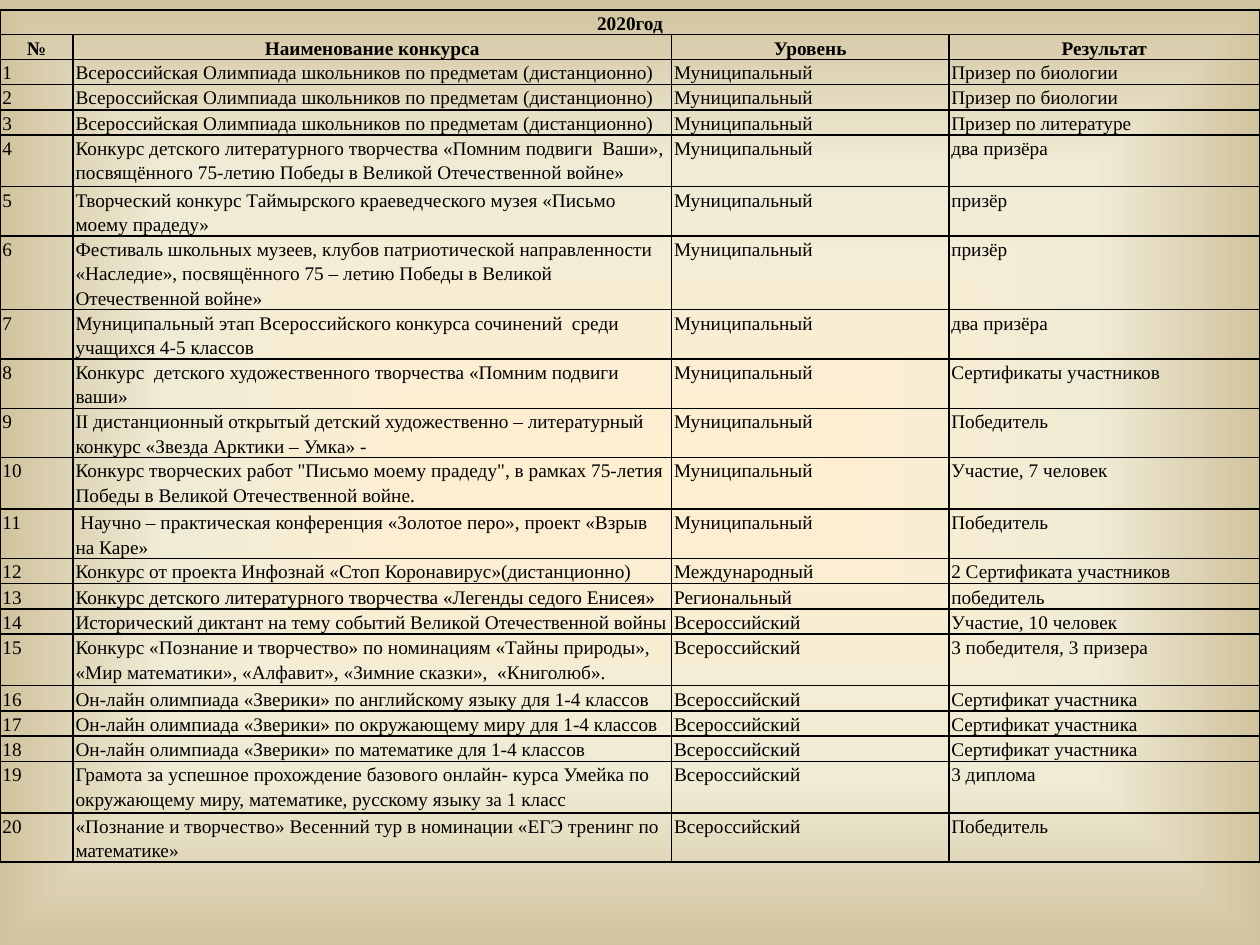
from lxml import etree
from pptx import Presentation
from pptx.dml.color import RGBColor
from pptx.enum.text import PP_ALIGN as Align
from pptx.oxml import parse_xml
from pptx.oxml.ns import qn
from pptx.util import Inches, Pt

BLACK = RGBColor(0x00, 0x00, 0x00)
CREAM = RGBColor(0xFF, 0xEF, 0xD1)
IVORY = RGBColor(0xF0, 0xEB, 0xD5)
SAND = RGBColor(0xD1, 0xC3, 0x9F)
DRAWING = "http://schemas.openxmlformats.org/drawingml/2006/main"

MUNICIPAL = "Муниципальный"
NATIONAL = "Всероссийский"
OLYMPIAD = "Всероссийская Олимпиада школьников по предметам (дистанционно)"
CERTIFICATE = "Сертификат участника"

# Contest, level, result, row height
contests = [
    (OLYMPIAD, MUNICIPAL, "Призер по биологии", 0.2),
    (OLYMPIAD, MUNICIPAL, "Призер по биологии", 0.2),
    (OLYMPIAD, MUNICIPAL, "Призер по литературе", 0.2),
    ("Конкурс детского литературного творчества «Помним подвиги  Ваши», "
     "посвящённого 75-летию Победы в Великой Отечественной войне»",
     MUNICIPAL, "два призёра", 0.41),
    ("Творческий конкурс Таймырского краеведческого музея «Письмо моему прадеду»",
     MUNICIPAL, "призёр", 0.3),
    ("Фестиваль школьных музеев, клубов патриотической направленности "
     "«Наследие», посвящённого 75 – летию Победы в Великой Отечественной войне»",
     MUNICIPAL, "призёр", 0.51),
    ("Муниципальный этап Всероссийского конкурса сочинений  среди "
     "учащихся 4-5 классов", MUNICIPAL, "два призёра", 0.3),
    ("Конкурс  детского художественного творчества «Помним подвиги ваши»",
     MUNICIPAL, "Сертификаты участников", 0.2),
    ("II дистанционный открытый детский художественно – литературный "
     "конкурс «Звезда Арктики – Умка» -", MUNICIPAL, "Победитель", 0.3),
    ("Конкурс творческих работ \"Письмо моему прадеду\", в рамках 75-летия "
     "Победы в Великой Отечественной войне.", MUNICIPAL, "Участие, 7 человек", 0.41),
    (" Научно – практическая конференция «Золотое перо», проект «Взрыв на Каре»",
     MUNICIPAL, "Победитель", 0.3),
    ("Конкурс от проекта Инфознай «Стоп Коронавирус»(дистанционно)",
     "Международный", "2 Сертификата участников", 0.2),
    ("Конкурс детского литературного творчества «Легенды седого Енисея»",
     "Региональный", "победитель", 0.2),
    ("Исторический диктант на тему событий Великой Отечественной войны",
     NATIONAL, "Участие, 10 человек", 0.2),
    ("Конкурс «Познание и творчество» по номинациям «Тайны природы», "
     "«Мир математики», «Алфавит», «Зимние сказки»,  «Книголюб».",
     NATIONAL, "3 победителя, 3 призера", 0.41),
    ("Он-лайн олимпиада «Зверики» по английскому языку для 1-4 классов",
     NATIONAL, CERTIFICATE, 0.2),
    ("Он-лайн олимпиада «Зверики» по окружающему миру для 1-4 классов",
     NATIONAL, CERTIFICATE, 0.2),
    ("Он-лайн олимпиада «Зверики» по математике для 1-4 классов",
     NATIONAL, CERTIFICATE, 0.2),
    ("Грамота за успешное прохождение базового онлайн- курса Умейка по "
     "окружающему миру, математике, русскому языку за 1 класс",
     NATIONAL, "3 диплома", 0.41),
    ("«Познание и творчество» Весенний тур в номинации «ЕГЭ тренинг по математике»",
     NATIONAL, "Победитель", 0.3),
]


def add_borders(cell):
    """Draw a thin black line on each side of a cell."""
    properties = cell._tc.get_or_add_tcPr()
    for position, side in enumerate(("lnL", "lnR", "lnT", "lnB")):
        line = etree.Element(qn(f"a:{side}"), w=str(Pt(1)))
        fill = etree.SubElement(line, qn("a:solidFill"))
        etree.SubElement(fill, qn("a:srgbClr"), val=str(BLACK))
        properties.insert(position, line)


deck = Presentation()
deck.slide_width, deck.slide_height = Inches(10), Inches(7.5)
page = deck.slides.add_slide(deck.slide_layouts[6])

# Background gradient spreading from the centre
page.background.fill.gradient()
gradient = page.background._cSld.find(".//" + qn("a:gradFill"))
gradient.getparent().replace(gradient, parse_xml(
    f'<a:gradFill xmlns:a="{DRAWING}" rotWithShape="1"><a:gsLst>'
    f'<a:gs pos="0"><a:srgbClr val="{CREAM}"><a:alpha val="62000"/></a:srgbClr></a:gs>'
    f'<a:gs pos="65000"><a:srgbClr val="{IVORY}"/></a:gs>'
    f'<a:gs pos="100000"><a:srgbClr val="{SAND}"/></a:gs></a:gsLst>'
    '<a:path path="shape"><a:fillToRect l="50000" t="50000" r="50000" b="50000"/>'
    '</a:path></a:gradFill>'))

# Table grid
rows = [("2020год", "", "", ""), ("№", "Наименование конкурса", "Уровень", "Результат")]
rows += [(str(number), *contest[:3]) for number, contest in enumerate(contests, 1)]
heights = [0.1, 0.1] + [contest[3] for contest in contests]
frame = page.shapes.add_table(len(rows), 4, Inches(0), Inches(0.08), Inches(10), Inches(6.93))
table = frame.table
table.first_row = table.horz_banding = False
for column, width in zip(table.columns, (0.58, 4.75, 2.2, 2.47)):
    column.width = Inches(width)
for row, height in zip(table.rows, heights):
    row.height = Inches(height)
table.cell(0, 0).merge(table.cell(0, 3))

# Cell text and look
for row_index, texts in enumerate(rows):
    heading = row_index < 2
    for column_index, text in enumerate(texts):
        cell = table.cell(row_index, column_index)
        cell.margin_left = cell.margin_right = Inches(0.02)
        cell.margin_top = cell.margin_bottom = 0
        cell.fill.background()
        add_borders(cell)
        para = cell.text_frame.paragraphs[0]
        para.text = text
        para.alignment = Align.CENTER if heading else Align.LEFT
        para.line_spacing = 1.15
        para.space_after = Pt(10)
        para.font.name = "Times New Roman"
        para.font.size = Pt(11)
        para.font.bold = heading
        para.font.color.rgb = BLACK

deck.save("out.pptx")
